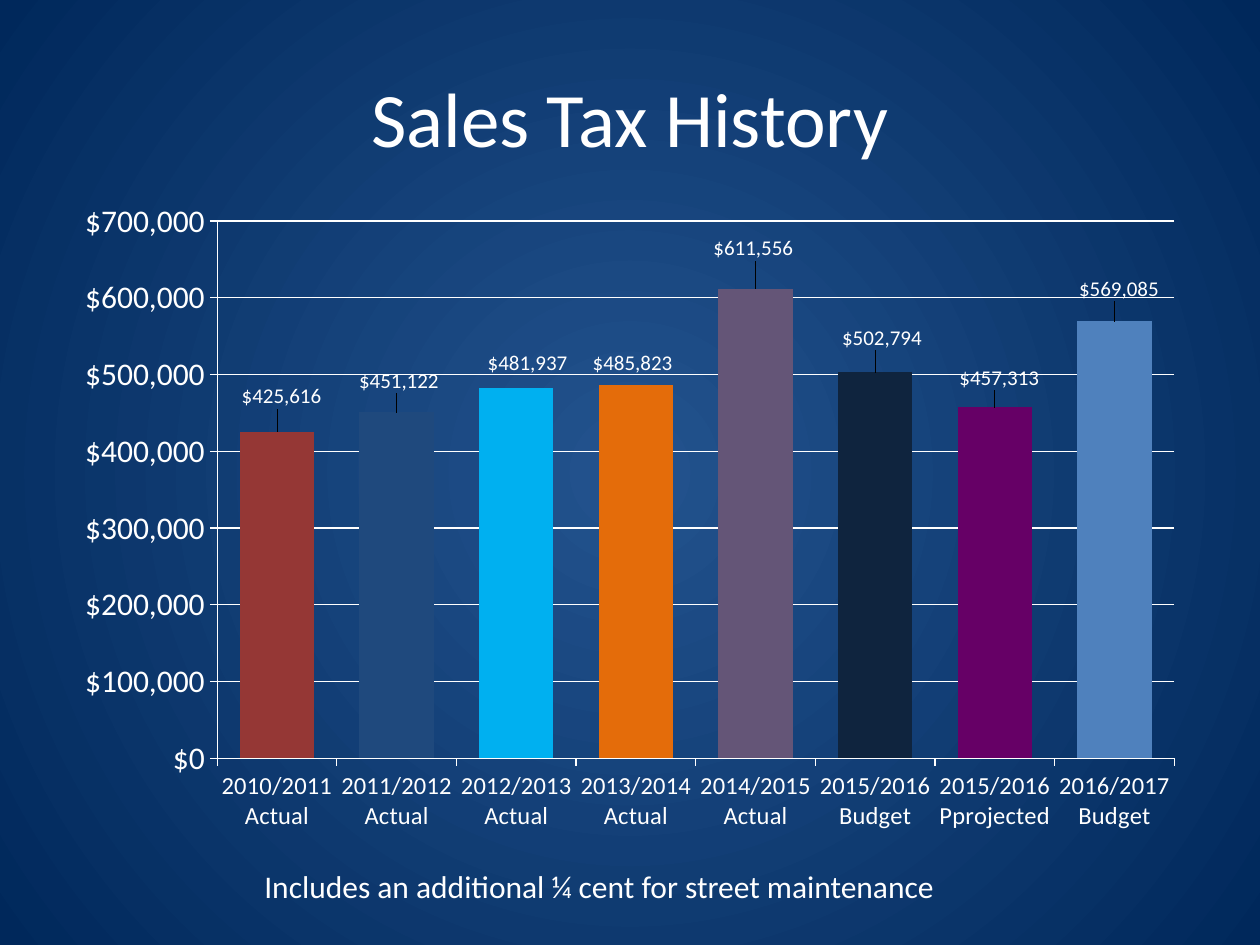
"""Build the Sales Tax History slide with a column chart of yearly receipts."""
import pptx
import pptx.chart.data
import pptx.dml.color
import pptx.enum.chart
import pptx.enum.text
import pptx.oxml
import pptx.oxml.ns
import pptx.util

Cm, Pt = pptx.util.Cm, pptx.util.Pt
RGBColor = pptx.dml.color.RGBColor
WHITE = RGBColor(0xFF, 0xFF, 0xFF)
GLOW = RGBColor(0x23, 0x53, 0x8E)
NAVY = RGBColor(0x00, 0x28, 0x5B)
BRICK = RGBColor(0x95, 0x37, 0x35)
BLUE = RGBColor(0x1F, 0x49, 0x7D)
CYAN = RGBColor(0x00, 0xB0, 0xF0)
ORANGE = RGBColor(0xE4, 0x6C, 0x0A)
MAUVE = RGBColor(0x64, 0x55, 0x77)
MIDNIGHT = RGBColor(0x0F, 0x24, 0x3E)
PURPLE = RGBColor(0x66, 0x00, 0x66)
STEEL = RGBColor(0x4F, 0x81, 0xBD)
DOLLARS = '"$"#,##0'
FONT = "Calibri"

# year, amount, bar colour, label shift right and down in percent of the chart
YEARS = [
    ("2010/2011 Actual", 425616, BRICK, 0.4, -2.7),
    ("2011/2012 Actual", 451122, BLUE, 0.2, -2.1),
    ("2012/2013 Actual", 481937, CYAN, 1, -1.2),
    ("2013/2014 Actual", 485823, ORANGE, -0.3, -0.8),
    ("2014/2015 Actual", 611556, MAUVE, -0.2, -3.5),
    ("2015/2016 Budget", 502794, MIDNIGHT, 0.6, -2.6),
    ("2015/2016 Pprojected", 457313, PURPLE, 0.4, -1.8),
    ("2016/2017 Budget", 569085, STEEL, 0.4, -2.3),
]


def add_text(page, place, words, size, align, wrap):
    box = page.shapes.add_textbox(*[Cm(length) for length in place])
    frame = box.text_frame
    frame.word_wrap = wrap
    frame.vertical_anchor = pptx.enum.text.MSO_ANCHOR.MIDDLE
    para = frame.paragraphs[0]
    para.alignment = align
    span = para.add_run()
    span.text = words
    span.font.size = Pt(size)
    span.font.name = FONT
    span.font.color.rgb = WHITE


def manual_layout(**percents):
    parts = "".join(
        f'<c:{name} val="{value / 100:.3f}"/>' for name, value in percents.items())
    target = '<c:layoutTarget val="inner"/>' if "w" in percents else ""
    modes = '<c:xMode val="edge"/><c:yMode val="edge"/>' if target else ""
    return pptx.oxml.parse_xml(
        f'<c:layout {pptx.oxml.ns.nsdecls("c")}><c:manualLayout>'
        f"{target}{modes}{parts}</c:manualLayout></c:layout>")


deck = pptx.Presentation()
deck.slide_width, deck.slide_height = Cm(25.4), Cm(19.05)
page = deck.slides.add_slide(deck.slide_layouts[6])

backdrop = page.background.fill
backdrop.gradient()
for stop, colour, position in zip(backdrop.gradient_stops, (GLOW, NAVY), (0, 1)):
    stop.color.rgb = colour
    stop.position = position
linear = page.element.find(".//" + pptx.oxml.ns.qn("a:lin"))
linear.getparent().replace(linear, pptx.oxml.parse_xml(
    f'<a:path {pptx.oxml.ns.nsdecls("a")} path="circle">'
    '<a:fillToRect l="50000" t="50000" r="50000" b="50000"/></a:path>'))

add_text(page, (1.27, 0.76, 22.86, 3.18), "Sales Tax History", 44,
         pptx.enum.text.PP_ALIGN.CENTER, True)

table = pptx.chart.data.CategoryChartData(number_format=DOLLARS)
table.categories = [year[0] for year in YEARS]
table.add_series("Series 1", [year[1] for year in YEARS])
chart = page.shapes.add_chart(
    pptx.enum.chart.XL_CHART_TYPE.COLUMN_CLUSTERED,
    Cm(1.27), Cm(3.81), Cm(22.86), Cm(13.21), table).chart
chart.has_legend = False
chart.has_title = False
chart.font.size = Pt(18)
chart.font.name = FONT
chart.font.color.rgb = WHITE

area = chart.plots[0]._element.getparent()
for old in area.findall(pptx.oxml.ns.qn("c:layout")):
    area.remove(old)
area.insert(0, manual_layout(x=13.6, y=4.9, w=84.4, h=82))

amounts, years = chart.value_axis, chart.category_axis
amounts.minimum_scale, amounts.maximum_scale, amounts.major_unit = 0, 700000, 100000
amounts.has_major_gridlines = True
amounts.tick_labels.number_format = DOLLARS
amounts.tick_labels.number_format_is_linked = False
years.tick_labels.font.size = Pt(14)
years.tick_labels.font.name = FONT
years.tick_labels.font.color.rgb = WHITE
for axis in (amounts, years):
    axis.major_tick_mark = pptx.enum.chart.XL_TICK_MARK.OUTSIDE
for line in (amounts.format.line, years.format.line, amounts.major_gridlines.format.line):
    line.color.rgb = WHITE
    line.width = Pt(0.75)

plot = chart.plots[0]
plot.gap_width = 61
plot.vary_by_categories = False
plot.has_data_labels = True
labels = plot.data_labels
labels.show_value = True
labels.number_format = DOLLARS
labels.number_format_is_linked = False
labels.font.size = Pt(12)
labels.font.color.rgb = WHITE

series = plot.series[0]
series.format.fill.solid()
series.format.fill.fore_color.rgb = STEEL
for index, (name, amount, colour, right, down) in enumerate(YEARS):
    point = series.points[index]
    point.format.fill.solid()
    point.format.fill.fore_color.rgb = colour
    label = point.data_label
    label.font.size = Pt(12)
    label.font.name = FONT
    label.font.color.rgb = WHITE
    label.position = pptx.enum.chart.XL_LABEL_POSITION.OUTSIDE_END
for mark, year in zip(series._element.iter(pptx.oxml.ns.qn("c:dLbl")), YEARS):
    mark.insert(1, manual_layout(x=year[3], y=year[4]))

add_text(page, (5.08, 17.35, 14.4, 1.02),
         "Includes an additional ¼ cent for street maintenance", 18,
         pptx.enum.text.PP_ALIGN.LEFT, False)

deck.save("out.pptx")
